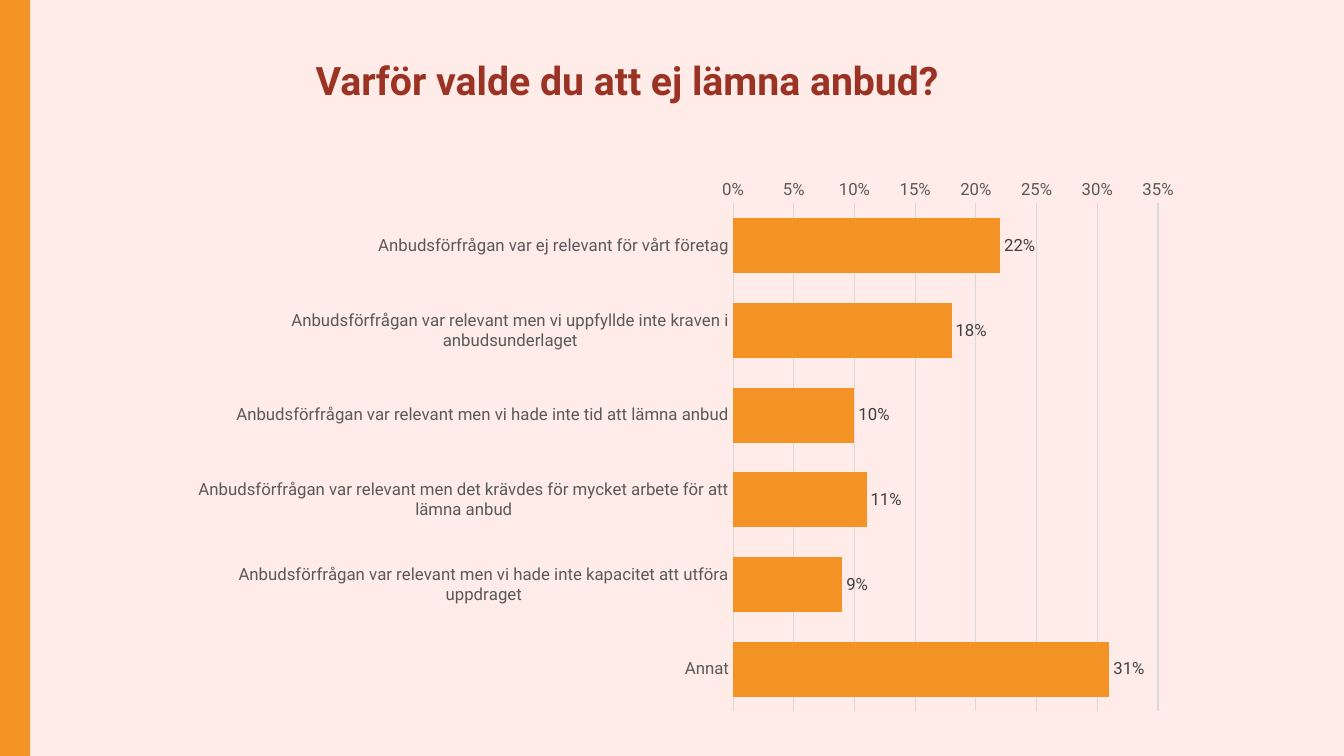
from lxml import etree
from pptx import Presentation
from pptx.chart.data import CategoryChartData
from pptx.dml.color import RGBColor
from pptx.enum.chart import XL_CHART_TYPE, XL_LABEL_POSITION, XL_TICK_MARK
from pptx.enum.shapes import MSO_SHAPE
from pptx.enum.text import MSO_ANCHOR, MSO_AUTO_SIZE, PP_ALIGN
from pptx.oxml.ns import qn
from pptx.util import Cm, Pt

BAR = XL_CHART_TYPE.BAR_CLUSTERED
OUTSIDE = XL_LABEL_POSITION.OUTSIDE_END
NO_TICK = XL_TICK_MARK.NONE
RECTANGLE = MSO_SHAPE.RECTANGLE
MIDDLE = MSO_ANCHOR.MIDDLE
NO_FIT = MSO_AUTO_SIZE.NONE
LEFT = PP_ALIGN.LEFT

WIDTH, HEIGHT = 33.87, 19.05

REASONS = [
    ("Anbudsförfrågan var ej relevant för vårt företag", 0.22),
    ("Anbudsförfrågan var relevant men vi uppfyllde inte kraven i anbudsunderlaget", 0.18),
    ("Anbudsförfrågan var relevant men vi hade inte tid att lämna anbud", 0.10),
    ("Anbudsförfrågan var relevant men det krävdes för mycket arbete för att lämna anbud", 0.11),
    ("Anbudsförfrågan var relevant men vi hade inte kapacitet att utföra uppdraget", 0.09),
    ("Annat", 0.31),
]


def colour(value):
    return RGBColor.from_string(value)


class SurveyPage:
    font_name = "Roboto"
    background = "FFEBE8"
    accent = "F39325"
    heading = "9A3324"
    axis_text = "595959"
    label_text = "404040"
    grid = "D9D9D9"

    def __init__(self, deck):
        self.page = deck.slides.add_slide(deck.slide_layouts[5])
        fill = self.page.background.fill
        fill.solid()
        fill.fore_color.rgb = colour(self.background)

    def style(self, font, size, text_colour, bold=False):
        font.name = self.font_name
        font.size = Pt(size)
        font.bold = bold
        font.color.rgb = colour(text_colour)

    def rule(self, line):
        line.color.rgb = colour(self.grid)
        line.width = Pt(0.75)

    def band(self, left, top, width, height):
        box = self.page.shapes.add_shape(
            RECTANGLE, Cm(left), Cm(top), Cm(width), Cm(height))
        box.shadow.inherit = False
        box.fill.solid()
        box.fill.fore_color.rgb = colour(self.accent)
        box.line.fill.background()

    def title(self, text, left, top, width, height):
        box = self.page.shapes.title
        box.left, box.top = Cm(left), Cm(top)
        box.width, box.height = Cm(width), Cm(height)
        frame = box.text_frame
        frame.text = text
        frame.word_wrap = True
        frame.auto_size = NO_FIT
        frame.vertical_anchor = MIDDLE
        para = frame.paragraphs[0]
        para.alignment = LEFT
        para.line_spacing = 0.9
        self.style(para.runs[0].font, 28, self.heading, bold=True)

    def bar_chart(self, rows, left, top, width, height, plot_area):
        data = CategoryChartData(number_format="0%")
        data.categories = [name for name, share in rows]
        data.add_series("Series 1", [share for name, share in rows])
        chart = self.page.shapes.add_chart(
            BAR, Cm(left), Cm(top), Cm(width), Cm(height), data).chart
        chart.has_legend = False
        chart.has_title = False
        self.style(chart.font, 10, "000000")

        # Bars and their labels
        plot = chart.plots[0]
        plot.gap_width = 54
        plot.vary_by_categories = False
        fill = plot.series[0].format.fill
        fill.solid()
        fill.fore_color.rgb = colour(self.accent)
        labels = plot.series[0].data_labels
        labels.show_value = True
        labels.position = OUTSIDE
        labels.number_format = "0%"
        labels.number_format_is_linked = False
        self.style(labels.font, 12, self.label_text)

        # Axes: first reason on top, percentages above the bars
        for axis in (chart.category_axis, chart.value_axis):
            axis.major_tick_mark = axis.minor_tick_mark = NO_TICK
            self.style(axis.tick_labels.font, 12, self.axis_text)
        chart.category_axis.reverse_order = True
        chart.category_axis.has_major_gridlines = False
        self.rule(chart.category_axis.format.line)
        shares = chart.value_axis
        shares.minimum_scale, shares.maximum_scale = 0, 0.35
        shares.major_unit = 0.05
        shares.tick_labels.number_format = "0%"
        shares.tick_labels.number_format_is_linked = False
        shares.format.line.fill.background()
        shares.has_major_gridlines = True
        self.rule(shares.major_gridlines.format.line)
        self.place_plot(chart, plot_area)

    def place_plot(self, chart, plot_area):
        area = chart._chartSpace.chart.plotArea
        for old in area.findall(qn("c:layout")):
            area.remove(old)
        layout = etree.Element(qn("c:layout"))
        area.insert(0, layout)
        manual = etree.SubElement(layout, qn("c:manualLayout"))
        settings = [("layoutTarget", "inner"), ("xMode", "edge"), ("yMode", "edge")]
        settings += zip("xywh", plot_area)
        for name, value in settings:
            etree.SubElement(manual, qn(f"c:{name}")).set("val", str(value))


def main():
    deck = Presentation()
    deck.slide_width, deck.slide_height = Cm(WIDTH), Cm(HEIGHT)
    survey = SurveyPage(deck)

    # Left edge and heading
    survey.band(0, 0, 0.76, HEIGHT)
    survey.title("Varför valde du att ej lämna anbud?", 7.7, 0.84, 22.7, 2.5)

    # Reasons; the plot area is given as shares of the chart
    survey.bar_chart(REASONS, 4.45, 4.29, 25.5, 13.92,
                     plot_area=(0.55, 0.06, 0.42, 0.92))
    deck.save("out.pptx")


if __name__ == "__main__":
    main()
